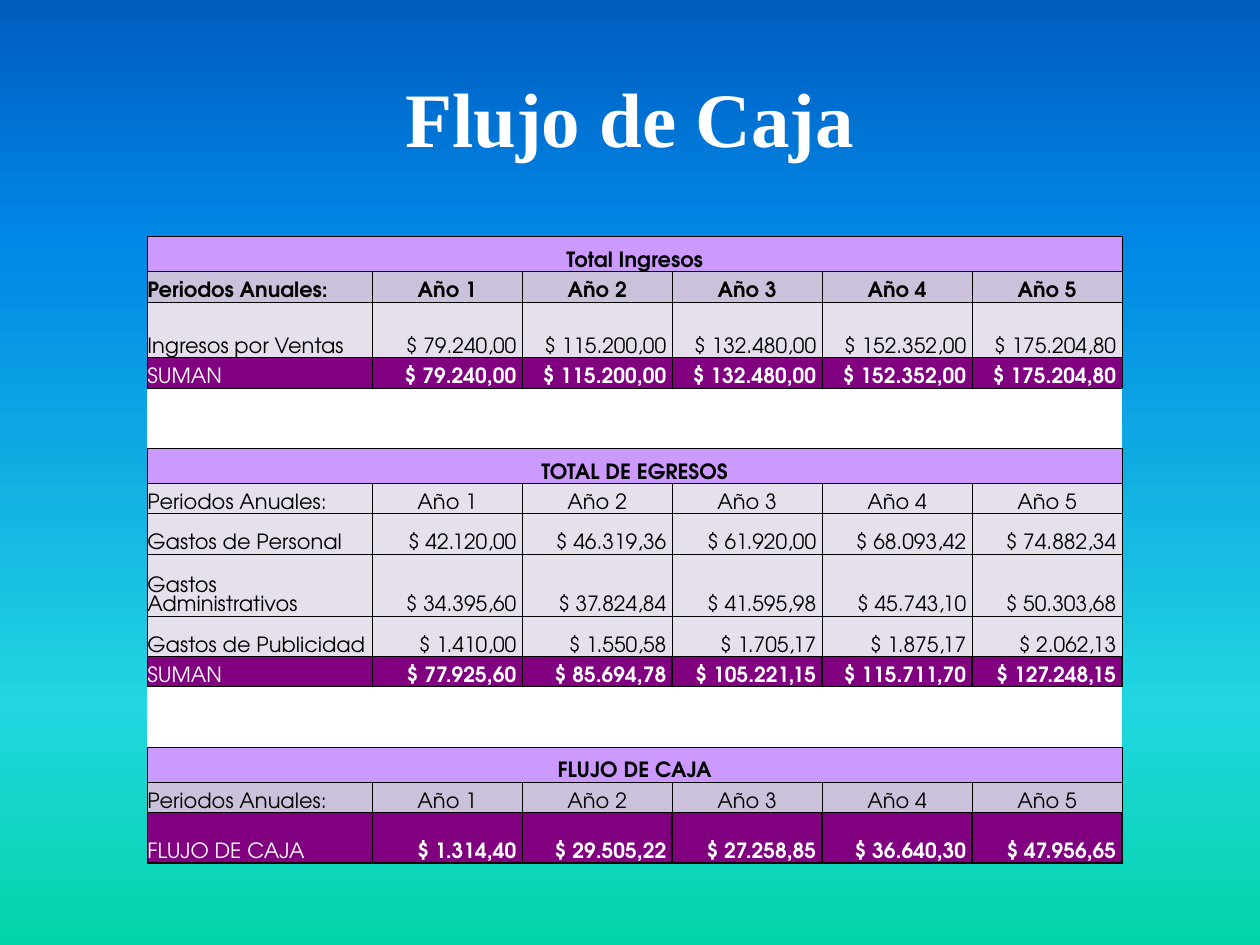
from lxml import etree
from pptx import Presentation
from pptx.dml.color import RGBColor
from pptx.enum.text import MSO_ANCHOR, PP_ALIGN
from pptx.oxml.ns import qn
from pptx.util import Pt

LEFT, CENTER, RIGHT = PP_ALIGN.LEFT, PP_ALIGN.CENTER, PP_ALIGN.RIGHT
MIDDLE, BOTTOM = MSO_ANCHOR.MIDDLE, MSO_ANCHOR.BOTTOM

COLORS = {
    "white": "FFFFFF", "black": "000000", "heading": "CC99FF",
    "periods": "CCC1DA", "detail": "E6E0EC", "total": "800080",
    "green": "03D4A8", "turquoise": "21D6E0", "sky": "0087E6", "blue": "005CBF",
}
BACKGROUND_STOPS = [(0, "green"), (25, "turquoise"), (75, "sky"), (100, "blue")]
NO_MARGINS = dict.fromkeys(
    ("margin_left", "margin_top", "margin_right", "margin_bottom"), 0)
THIN = dict.fromkeys("LRTB", 0.5)
STRONG = {**dict.fromkeys("LRB", 1), "T": 0.5}

YEARS = [f"Año {number}" for number in range(1, 6)]
SALES = ["79.240,00", "115.200,00", "132.480,00", "152.352,00", "175.204,80"]
STAFF = ["42.120,00", "46.319,36", "61.920,00", "68.093,42", "74.882,34"]
ADMINISTRATION = ["34.395,60", "37.824,84", "41.595,98", "45.743,10", "50.303,68"]
ADVERTISING = ["1.410,00", "1.550,58", "1.705,17", "1.875,17", "2.062,13"]
EXPENSES = ["77.925,60", "85.694,78", "105.221,15", "115.711,70", "127.248,15"]
CASH_FLOW = ["1.314,40", "29.505,22", "27.258,85", "36.640,30", "47.956,65"]


def heading(height, title):
    return dict(height=height, texts=[title], fill="heading", borders=THIN,
                bolds=(True, True), align=CENTER, merged=True)


def periods(height, fill, bold=False):
    return dict(height=height, texts=["Periodos Anuales:"] + YEARS, fill=fill,
                borders=THIN, bolds=(bold, bold), align=CENTER)


def amounts(height, label, values, fill="detail", borders=THIN):
    is_total = fill == "total"
    return dict(height=height, texts=[label] + [f"$ {value} " for value in values],
                fill=fill, borders=borders, bolds=(False, is_total), align=RIGHT,
                color="white" if is_total else "black")


def spacer(height, fill=None, merged=False, **borders):
    return dict(height=height, fill=fill, borders=borders, merged=merged)


ROWS = [
    spacer(25.2, merged=True),
    spacer(20.16, B=0.5),
    heading(19.8, "Total Ingresos"),
    periods(17.4, "periods", bold=True),
    amounts(31.8, "Ingresos por Ventas", SALES),
    amounts(17.4, "SUMAN", SALES, "total"),
    spacer(17.4, "white", T=0.5),
    spacer(17.4, "white", B=0.5),
    heading(19.8, "TOTAL DE EGRESOS"),
    periods(17.4, "detail"),
    amounts(23, "Gastos de Personal", STAFF),
    amounts(35.4, "Gastos Administrativos", ADMINISTRATION),
    amounts(23, "Gastos de Publicidad", ADVERTISING),
    amounts(17.4, "SUMAN", EXPENSES, "total", STRONG),
    spacer(17.4, "white", T=1),
    spacer(17.4, "white", B=0.5),
    heading(19.8, "FLUJO DE CAJA"),
    periods(17.4, "periods"),
    amounts(28.8, "FLUJO DE CAJA", CASH_FLOW, "total", STRONG),
]


class CashFlowSlide:
    title_font = "Times New Roman"
    table_font = "TeX Gyre Adventor"
    table_size = 12

    def __init__(self, presentation):
        self.slide = presentation.slides.add_slide(presentation.slide_layouts[6])

    def apply(self, target, values):
        for name, value in values.items():
            setattr(target, name, value)

    def background(self, stops):
        fill = self.slide.background.fill
        fill.gradient()
        fill.gradient_angle = 90
        stop_list = self.slide.element.find(".//" + qn("a:gsLst"))
        for stop in list(stop_list):
            stop_list.remove(stop)
        for position, color in stops:
            stop = etree.SubElement(stop_list, qn("a:gs"), pos=str(position * 1000))
            etree.SubElement(stop, qn("a:srgbClr"), val=COLORS[color])

    def add_text(self, paragraph, text, align, color, **font):
        paragraph.alignment = align
        run = paragraph.add_run()
        run.text = text
        self.apply(run.font, font)
        run.font.color.rgb = RGBColor.from_string(COLORS[color])

    def title(self, text, left, top, width, height):
        frame = self.slide.shapes.add_textbox(
            Pt(left), Pt(top), Pt(width), Pt(height)).text_frame
        self.apply(frame, {"word_wrap": True, "vertical_anchor": MIDDLE})
        self.add_text(frame.paragraphs[0], text, CENTER, "white",
                      name=self.title_font, size=Pt(44), bold=True)

    def borders(self, cell, widths):
        properties = cell._tc.get_or_add_tcPr()
        for index, side in enumerate("LRTB"):
            width = widths.get(side, 0)
            line = etree.Element(qn(f"a:ln{side}"), w=str(Pt(width)))
            if width:
                paint = etree.SubElement(line, qn("a:solidFill"))
                etree.SubElement(paint, qn("a:srgbClr"), val=COLORS["black"])
            else:
                etree.SubElement(line, qn("a:noFill"))
            properties.insert(index, line)

    def cell(self, cell, row, column):
        self.apply(cell, {**NO_MARGINS, "vertical_anchor": BOTTOM})
        if row["fill"]:
            cell.fill.solid()
            cell.fill.fore_color.rgb = RGBColor.from_string(COLORS[row["fill"]])
        else:
            cell.fill.background()
        self.borders(cell, row["borders"])
        paragraph = cell.text_frame.paragraphs[0]
        texts = row.get("texts", [])
        if column < len(texts):
            is_label = column == 0 and not row.get("merged")
            self.add_text(paragraph, texts[column], LEFT if is_label else row["align"],
                          row.get("color", "black"), name=self.table_font,
                          size=Pt(self.table_size), bold=row["bolds"][column > 0])
        else:
            ending = paragraph._p.get_or_add_endParaRPr()
            ending.set("sz", str(self.table_size * 100))

    def table(self, rows, left, top, widths):
        table = self.slide.shapes.add_table(
            len(rows), len(widths), Pt(left), Pt(top), Pt(sum(widths)),
            Pt(sum(row["height"] for row in rows))).table
        self.apply(table, {"first_row": False, "horz_banding": False})
        for column, width in zip(table.columns, widths):
            column.width = Pt(width)
        for index, row in enumerate(rows):
            table.rows[index].height = Pt(row["height"])
            for column in range(len(widths)):
                self.cell(table.cell(index, column), row, column)
            if row.get("merged"):
                table.cell(index, 0).merge(table.cell(index, len(widths) - 1))


def main():
    presentation = Presentation()
    presentation.slide_width, presentation.slide_height = Pt(720), Pt(540)
    cash_flow = CashFlowSlide(presentation)
    cash_flow.background(BACKGROUND_STOPS)
    cash_flow.title("Flujo de Caja", 36, 21.6, 648, 90)
    cash_flow.table(ROWS, 84.24, 90, [128.5] + [85.7] * 5)
    presentation.save("out.pptx")


if __name__ == "__main__":
    main()
